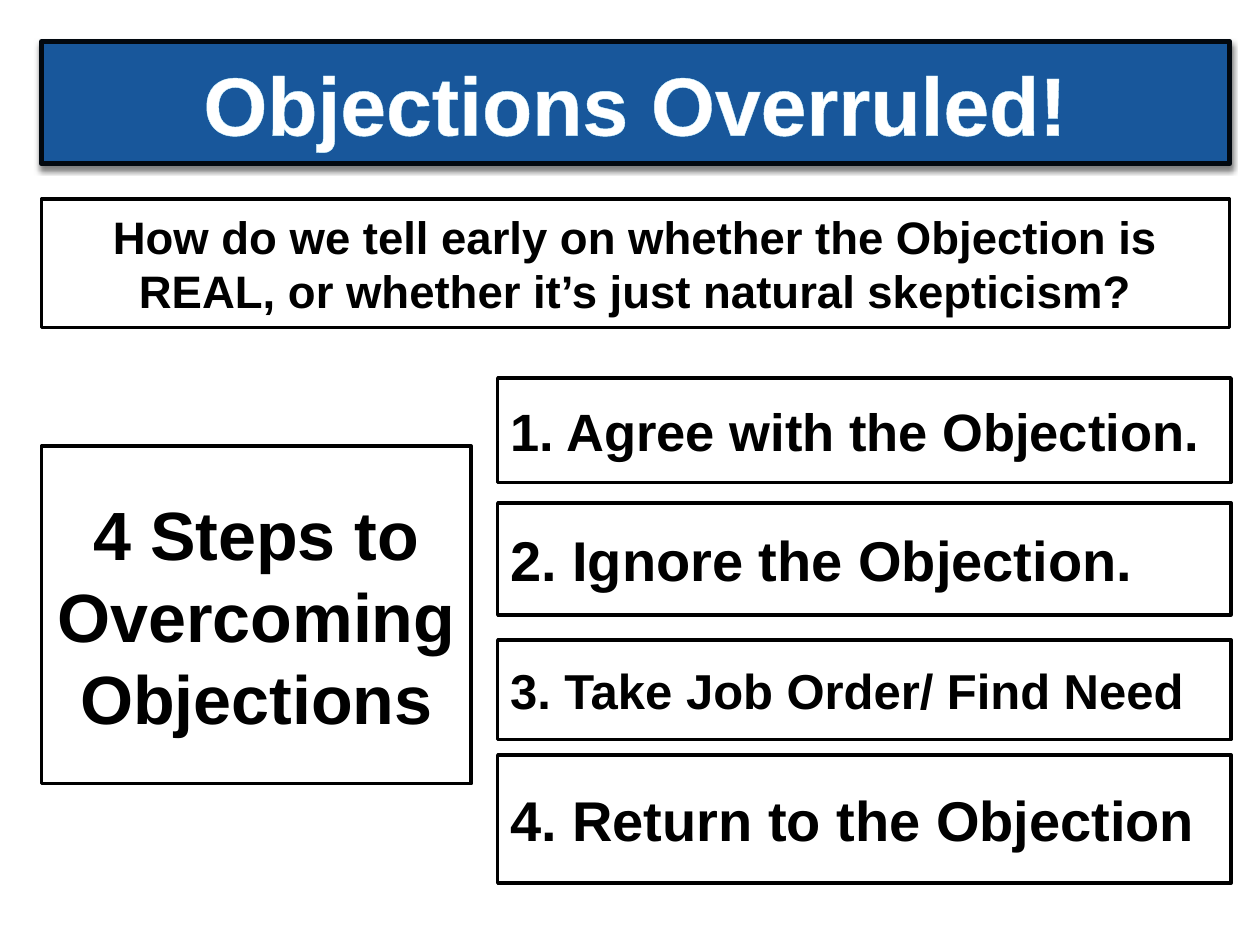
from lxml import etree
from pptx import Presentation
from pptx.dml.color import RGBColor
from pptx.enum.shapes import MSO_SHAPE
from pptx.enum.text import MSO_ANCHOR, MSO_AUTO_SIZE, PP_ALIGN
from pptx.oxml.ns import qn
from pptx.util import Inches, Pt

RECTANGLE = MSO_SHAPE.RECTANGLE
MIDDLE = MSO_ANCHOR.MIDDLE
NO_AUTOFIT = MSO_AUTO_SIZE.NONE
LEFT, CENTER = PP_ALIGN.LEFT, PP_ALIGN.CENTER
TITLE_ONLY = 5

COLUMNS, ROWS = 100, 75
MARGIN, FULL_WIDTH = 3.3, 94.3
STEP_LEFT, STEP_WIDTH = 39.5, 58.2
STEPS = [
    ("1. Agree with the Objection.", 30, 8.3, 30),
    ("2. Ignore the Objection.", 39.9, 8.9, 32),
    ("3. Take Job Order/ Find Need", 50.8, 7.9, 28),
    ("4. Return to the Objection", 59.9, 10.2, 32),
]


def color(value):
    return RGBColor.from_string(value)


def add_color(parent, value, alpha=100):
    element = etree.SubElement(parent, qn("a:srgbClr"), val=value)
    if alpha < 100:
        etree.SubElement(element, qn("a:alpha"), val=str(alpha * 1000))


def write_text(shape, text, size, align=CENTER, fill="000000", font="Arial"):
    frame = shape.text_frame
    frame.word_wrap = True
    frame.auto_size = NO_AUTOFIT
    frame.vertical_anchor = MIDDLE
    paragraph = frame.paragraphs[0]
    paragraph.alignment = align
    run = paragraph.add_run()
    run.text = text
    run.font.name = font
    run.font.size = Pt(size)
    run.font.bold = True
    run.font.color.rgb = color(fill)
    return run


class SlideBuilder:
    def __init__(self, presentation):
        self.slide = presentation.slides.add_slide(presentation.slide_layouts[TITLE_ONLY])
        self.column = presentation.slide_width / COLUMNS
        self.row = presentation.slide_height / ROWS

    def place(self, left, top, width, height):
        return (round(left * self.column), round(top * self.row),
                round(width * self.column), round(height * self.row))

    def paint(self, shape, fill, line, width):
        shape.fill.solid()
        shape.fill.fore_color.rgb = color(fill)
        shape.line.color.rgb = color(line)
        shape.line.width = Pt(width)

    def title(self, text, area, size):
        shape = self.slide.shapes.title
        shape.left, shape.top, shape.width, shape.height = self.place(*area)
        self.paint(shape, "18579B", "02080F", 3)
        effects = etree.SubElement(shape.element.spPr, qn("a:effectLst"))
        shadow = etree.SubElement(effects, qn("a:outerShdw"), blurRad=str(Pt(3)),
                                  dist=str(Pt(2)), dir="5400000", rotWithShape="0")
        add_color(shadow, "000000", alpha=50)
        run = write_text(shape, text, size, fill="FFFFFF")
        outline = etree.Element(qn("a:ln"), w=str(Pt(1)))
        add_color(etree.SubElement(outline, qn("a:solidFill")), "CCF2FD")
        run.font._element.insert(0, outline)

    def box(self, text, area, size, align=CENTER):
        shape = self.slide.shapes.add_shape(RECTANGLE, *self.place(*area))
        shape.shadow.inherit = False
        self.paint(shape, "FFFFFF", "000000", 2)
        write_text(shape, text, size, align=align)


def main():
    presentation = Presentation()
    presentation.slide_width, presentation.slide_height = Inches(10), Inches(7.5)
    builder = SlideBuilder(presentation)
    builder.title("Objections Overruled!", (MARGIN, 3.3, FULL_WIDTH, 9.7), 47)
    builder.box("How do we tell early on whether the Objection is REAL, "
                "or whether it’s just natural skepticism?",
                (MARGIN, 15.8, FULL_WIDTH, 10.2), 26)
    builder.box("4 Steps to Overcoming Objections", (MARGIN, 35.4, 34.1, 26.8), 39)
    for text, top, height, size in STEPS:
        builder.box(text, (STEP_LEFT, top, STEP_WIDTH, height), size, align=LEFT)
    presentation.save("out.pptx")


if __name__ == "__main__":
    main()
